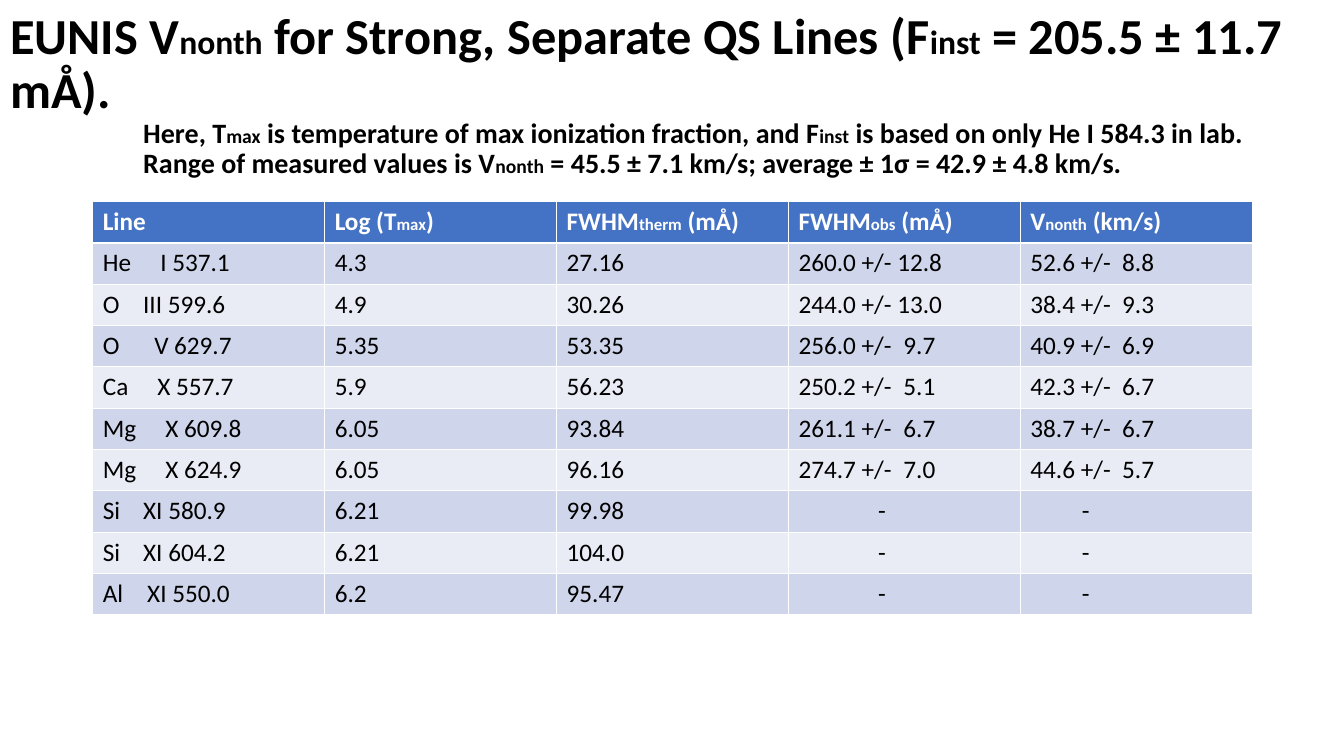
from lxml import etree
from pptx import Presentation
from pptx.dml.color import RGBColor
from pptx.enum.text import MSO_ANCHOR, MSO_AUTO_SIZE, PP_ALIGN
from pptx.oxml.ns import qn
from pptx.util import Inches, Pt

LEFT, MIDDLE, NO_FIT = PP_ALIGN.LEFT, MSO_ANCHOR.MIDDLE, MSO_AUTO_SIZE.NONE

HEADING = "EUNIS V_nonth_ for Strong, Separate QS Lines (F_inst_ = 205.5 ± 11.7 mÅ)."
NOTES = [
    "Here, T_max_ is temperature of max ionization fraction, and F_inst_ is based on only He I 584.3 in lab.",
    "Range of measured values is V_nonth_ = 45.5 ± 7.1 km/s; average ± 1σ = 42.9 ± 4.8 km/s.",
]
HEADERS = ["Line", "Log (T_max_)", "FWHM_therm_ (mÅ)", "FWHM_obs_ (mÅ)", "V_nonth_ (km/s)"]
ROWS = [
    ("He\tI 537.1", "4.3", "27.16", "260.0 +/- 12.8", "52.6 +/-\t8.8"),
    ("O\tIII 599.6", "4.9", "30.26", "244.0 +/- 13.0", "38.4 +/-\t9.3"),
    ("O\tV 629.7", "5.35", "53.35", "256.0 +/-\t9.7", "40.9 +/-\t6.9"),
    ("Ca\tX 557.7", "5.9", "56.23", "250.2 +/-\t5.1", "42.3 +/-\t6.7"),
    ("Mg\tX 609.8", "6.05", "93.84", "261.1 +/-\t6.7", "38.7 +/-\t6.7"),
    ("Mg\tX 624.9", "6.05", "96.16", "274.7 +/-\t7.0", "44.6 +/-\t5.7"),
    ("Si\tXI 580.9", "6.21", "99.98", "-", "-"),
    ("Si\tXI 604.2", "6.21", "104.0", "-", "-"),
    ("Al\tXI 550.0", "6.2", "95.47", "-", "-"),
]
STAGE_TABS = [0.57, 0.4, 0.51, 0.54, 0.62, 0.62, 0.4, 0.4, 0.44]
ERROR_TABS = {3: 1.04, 4: 0.91}
DASH_INDENTS = {3: 0.79, 4: 0.51}
NOTE_INDENT = 1.32
COL_WIDTH, ROW_HEIGHT = 2.3, 0.41
HEADER_FILL, BANDS = "4472C4", ["CFD5EA", "E9EBF5"]


def color(value):
    return RGBColor.from_string(value)


def indent(p, inches):
    pPr = p._p.get_or_add_pPr()
    pPr.set("marL", str(Inches(inches)))
    pPr.set("indent", "0")


def add_tab(p, inches):
    tabs = etree.SubElement(p._p.get_or_add_pPr(), qn("a:tabLst"))
    etree.SubElement(tabs, qn("a:tab"), pos=str(Inches(inches)), algn="l")


def write(p, text, size, sub_size, ink, bold):
    p.font.name = "Calibri"
    p.font.bold = bold
    p.font.color.rgb = color(ink)
    for i, part in enumerate(text.split("_")):
        if part:
            r = p.add_run()
            r.text = part
            r.font.size = Pt(sub_size if i % 2 else size)
            r.font.bold = bold
            r.font.color.rgb = color(ink)


prs = Presentation()
prs.slide_width, prs.slide_height = Inches(13.33), Inches(7.5)
s = prs.slides.add_slide(prs.slide_layouts[5])

title = s.shapes.title
title.left, title.top = Inches(0), Inches(0.13)
title.width, title.height = prs.slide_width, Inches(1.63)
tf = title.text_frame
tf.word_wrap, tf.auto_size, tf.vertical_anchor = True, NO_FIT, MIDDLE
for i, text in enumerate([HEADING] + NOTES):
    p = tf.add_paragraph() if i else tf.paragraphs[0]
    p.alignment, p.line_spacing = LEFT, 0.9
    if i:
        indent(p, NOTE_INDENT)
    size, sub_size = (20, 14) if i else (36, 24)
    write(p, text, size, sub_size, "000000", True)

n_rows, n_cols = len(ROWS) + 1, len(HEADERS)
table = s.shapes.add_table(n_rows, n_cols, Inches(0.92), Inches(2),
                           Inches(COL_WIDTH * n_cols), Inches(ROW_HEIGHT * n_rows)).table
for row in table.rows:
    row.height = Inches(ROW_HEIGHT)
for i, values in enumerate([HEADERS] + ROWS):
    for j, text in enumerate(values):
        cell = table.cell(i, j)
        cell.fill.solid()
        cell.fill.fore_color.rgb = color(BANDS[(i - 1) % 2] if i else HEADER_FILL)
        p = cell.text_frame.paragraphs[0]
        if text == "-":
            indent(p, DASH_INDENTS[j])
        elif "\t" in text:
            add_tab(p, ERROR_TABS[j] if j else STAGE_TABS[i - 1])
        write(p, text, 18, 12, "000000" if i else "FFFFFF", i == 0)

prs.save("out.pptx")
